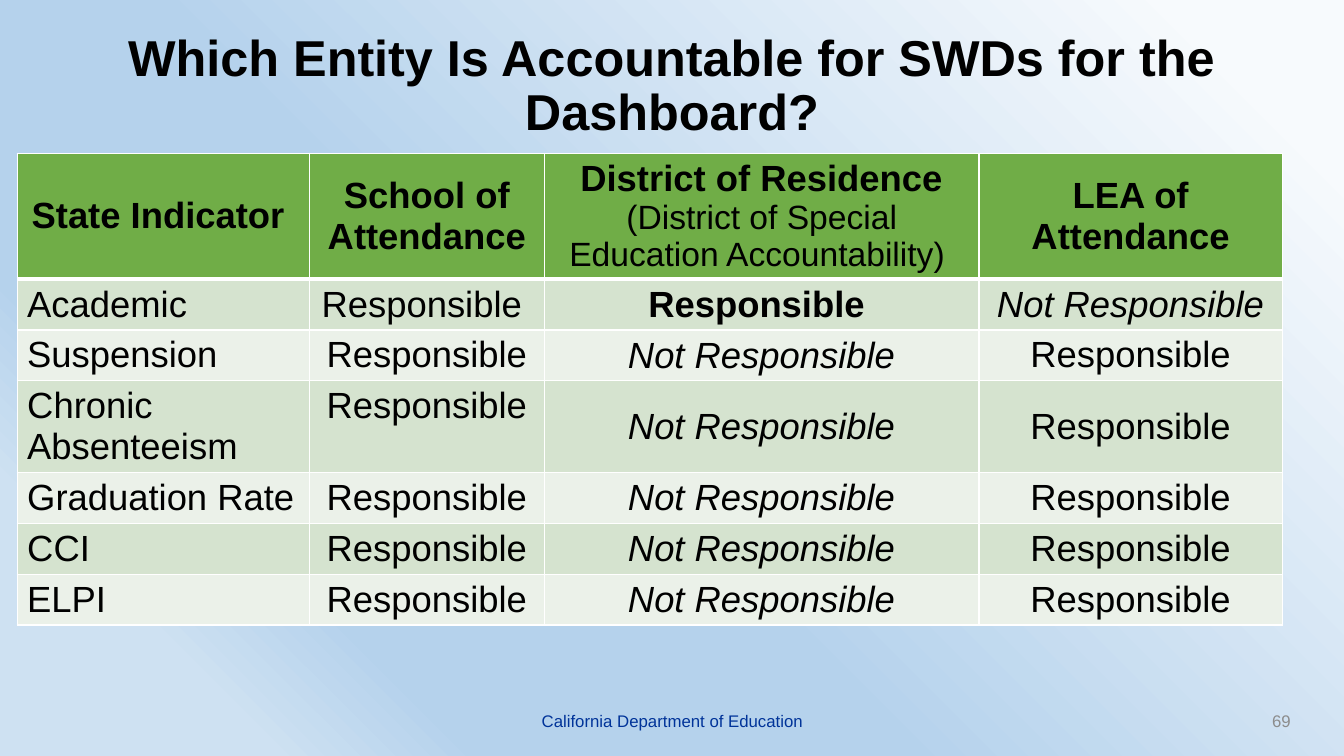
from copy import deepcopy

from lxml import etree
from pptx import Presentation
from pptx import util as u
from pptx.dml.color import RGBColor
from pptx.enum import text
from pptx.oxml.ns import qn

COLORS = {
    "text": "000000", "white": "FFFFFF", "header": "70AD47",
    "band_dark": "D5E3CF", "band_light": "EBF1E9",
    "footer": "003399", "number": "8C8C8C",
}
BACKGROUND = [(0.08, "F7FAFD"), (0.57, "B5D2EC"), (0.77, "B5D2EC"), (0.87, "CEE1F2")]
CENTER, LEFT, RIGHT = text.PP_ALIGN.CENTER, text.PP_ALIGN.LEFT, text.PP_ALIGN.RIGHT
MIDDLE, TOP = text.MSO_ANCHOR.MIDDLE, text.MSO_ANCHOR.TOP


def style(p, size, color="text", align=CENTER, bold=False, italic=False):
    """Align a paragraph and format its runs."""
    p.alignment = align
    for r in p.runs:
        r.font.name, r.font.size = "Arial", u.Pt(size)
        r.font.bold, r.font.italic = bold, italic
        r.font.color.rgb = RGBColor.from_string(COLORS[color])


def add_borders(cell, top, bottom):
    """Draw white cell borders, 1 pt at the sides."""
    tcPr = cell._tc.get_or_add_tcPr()
    for side, width in (("L", 1), ("R", 1), ("T", top), ("B", bottom)):
        ln = etree.SubElement(tcPr, qn(f"a:ln{side}"), w=str(u.Pt(width)))
        fill = etree.SubElement(ln, qn("a:solidFill"))
        etree.SubElement(fill, qn("a:srgbClr"), val=COLORS["white"])


prs = Presentation()
prs.slide_width, prs.slide_height = u.Inches(13.33), u.Inches(7.5)
s = prs.slides.add_slide(prs.slide_layouts[5])

# Background gradient
fill = s.background.fill
fill.gradient()
fill.gradient_angle = 225
gs_list = fill._fill._gradFill.find(qn("a:gsLst"))
while len(gs_list) < len(BACKGROUND):
    gs_list.append(deepcopy(gs_list[0]))
for stop, (position, color) in zip(fill.gradient_stops, BACKGROUND):
    stop.position = position
    stop.color.rgb = RGBColor.from_string(color)

# Title
title = s.shapes.title
title.left, title.top = u.Inches(0), u.Inches(0)
title.width, title.height = u.Inches(13.33), u.Inches(1.73)
tf = title.text_frame
tf.text = "Which Entity Is Accountable for SWDs for the Dashboard?"
tf.vertical_anchor = MIDDLE
tf.paragraphs[0].line_spacing = 0.9
style(tf.paragraphs[0], 36, bold=True)

# Accountability table
YES, NO = "Responsible", "Not Responsible"
rows = [
    ("State Indicator ", "School of Attendance",
     "District of Residence\n(District of Special Education Accountability) ",
     "LEA of Attendance"),
    ("Academic", YES + " ", YES + " ", NO),
]
for indicator in ("Suspension", "Chronic Absenteeism", "Graduation Rate", "CCI", "ELPI"):
    rows.append((indicator, YES, NO, YES))
col_widths = [2.9, 2.33, 4.31, 3.01]
row_heights = [1.25, 0.5, 0.5, 0.91, 0.5, 0.5, 0.5]

table = s.shapes.add_table(
    len(rows), len(col_widths), u.Inches(0.17), u.Inches(1.52),
    u.Inches(sum(col_widths)), u.Inches(sum(row_heights))).table
for col, width in zip(table.columns, col_widths):
    col.width = u.Inches(width)
for row, height in zip(table.rows, row_heights):
    row.height = u.Inches(height)

for i, row in enumerate(rows):
    header = i == 0
    band = "header" if header else "band_dark" if i % 2 else "band_light"
    for j, value in enumerate(row):
        cell = table.cell(i, j)
        cell.text = value
        middle = header or j == 2 or (j == 3 and row[0] == "Chronic Absenteeism")
        cell.vertical_anchor = MIDDLE if middle else TOP
        add_borders(cell, top=3 if i == 1 else 1, bottom=3 if header else 1)
        cell.fill.solid()
        cell.fill.fore_color.rgb = RGBColor.from_string(COLORS[band])
        for k, p in enumerate(cell.text_frame.paragraphs):
            style(p, 24 if k else 26,
                  align=CENTER if header or j else LEFT,
                  bold=(header and k == 0) or (i == 1 and j == 2),
                  italic=value == NO)

# Footer and slide number
for left, width, value, color, align in (
        (4.42, 4.5, "California Department of Education", "footer", CENTER),
        (9.9, 3, "69", "number", RIGHT)):
    tf = s.shapes.add_textbox(
        u.Inches(left), u.Inches(6.95), u.Inches(width), u.Inches(0.4)).text_frame
    tf.word_wrap = True
    tf.vertical_anchor = MIDDLE
    tf.text = value
    style(tf.paragraphs[0], 12, color, align)

prs.save("out.pptx")
